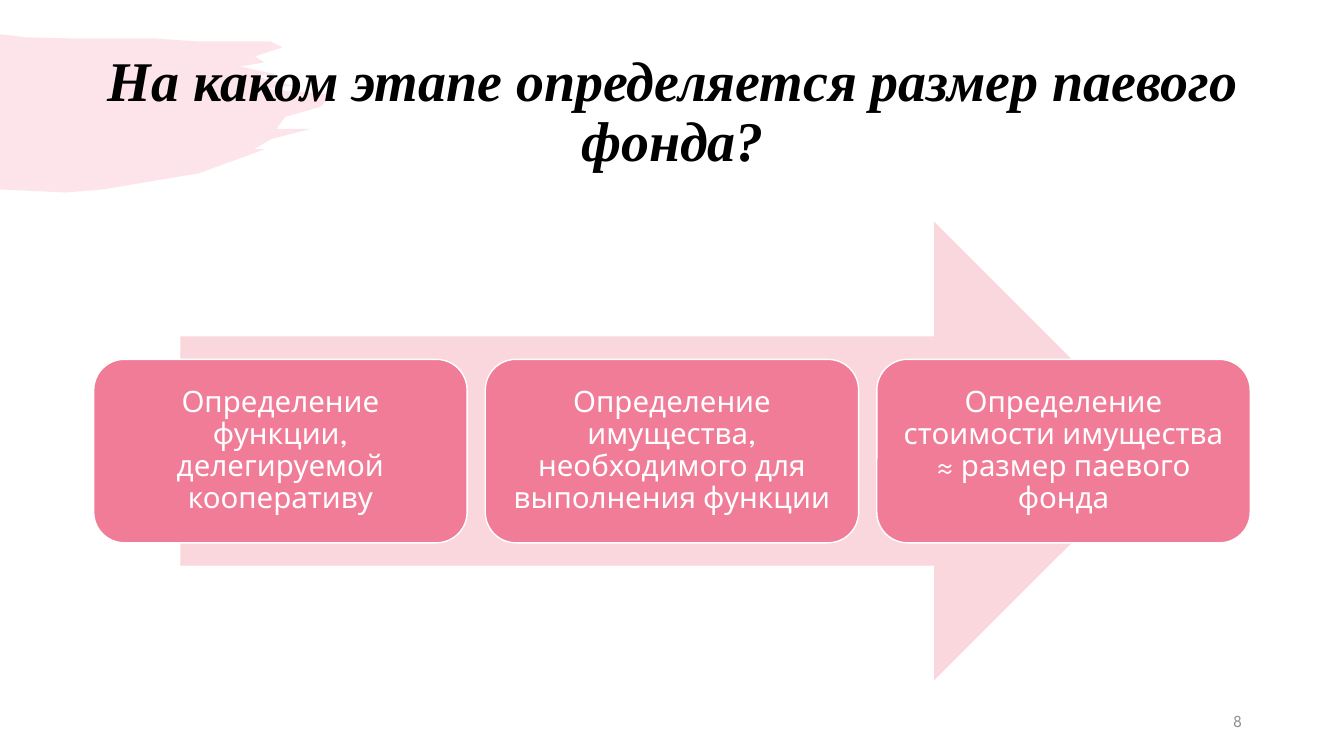
from lxml import etree
from pptx import Presentation
from pptx.dml.color import RGBColor
from pptx.enum.shapes import MSO_SHAPE as Shape
from pptx.enum.text import MSO_ANCHOR as Anchor, PP_ALIGN as Align
from pptx.oxml.ns import qn
from pptx.util import Inches, Pt

ROSE, BLUSH, WHITE, BLACK, GREY = "F07C98", "F9D7DD", "FFFFFF", "000000", "8C8C8C"
BODY_FONT, TITLE_FONT = "League Spartan", "Times New Roman"
STEPS = [
    "Определение функции, делегируемой кооперативу",
    "Определение имущества, необходимого для выполнения функции",
    "Определение стоимости имущества ≈ размер паевого фонда",
]
# Brush outline in inches from its top left corner
BRUSH = [
    (0.25, 0.03), (0.66, 0.04), (1.51, 0.04), (1.94, 0.07), (2.68, 0.07), (2.8, 0.13),
    (2.53, 0.22), (2.62, 0.28), (2.38, 0.32), (2.75, 0.4), (2.51, 0.41), (2.9, 0.51),
    (2.63, 0.54), (3.3, 0.6), (3.18, 0.72), (2.83, 0.82), (2.74, 0.94), (3.08, 0.94),
    (2.69, 1.04), (2.52, 1.14), (2.63, 1.14), (1.97, 1.38), (1.02, 1.54), (0.65, 1.57),
    (0, 1.54),
]


def color(value):
    return RGBColor.from_string(value)


def paint(shape, fill, line=None):
    shape.shadow.inherit = False
    shape.fill.solid()
    shape.fill.fore_color.rgb = color(fill)
    if line:
        shape.line.color.rgb = color(line)
        shape.line.width = Pt(1)
    else:
        shape.line.fill.background()


def write(shape, text, align, ink, inset=0.1, spacing=1.0, **font):
    frame = shape.text_frame
    frame.word_wrap = True
    frame.vertical_anchor = Anchor.MIDDLE
    for side in ("left", "right", "top", "bottom"):
        setattr(frame, f"margin_{side}", Inches(inset))
    para = frame.paragraphs[0]
    para.alignment, para.line_spacing = align, spacing
    span = para.add_run()
    span.text = text
    span.font.color.rgb = color(ink)
    for name, value in font.items():
        setattr(span.font, name, value)


def add_text(page, box, text, align, ink, **options):
    shape = page.shapes.add_textbox(*map(Inches, box))
    write(shape, text, align, ink, **options)


def add_brush(page, left, top):
    points = [(Inches(left + x), Inches(top + y)) for x, y in BRUSH]
    builder = page.shapes.build_freeform(Inches(left), Inches(top))
    builder.add_line_segments(points, close=True)
    brush = builder.convert_to_shape()
    paint(brush, ROSE)
    tint = brush.element.spPr.find(f"{qn('a:solidFill')}/{qn('a:srgbClr')}")
    etree.SubElement(tint, qn("a:alpha"), val="20000")


def add_process(page, box, steps):
    """Wide arrow with a row of step cards across its middle."""
    left, top, width, height = box
    arrow_width = width * 0.85
    arrow = page.shapes.add_shape(
        Shape.RIGHT_ARROW, Inches(left + (width - arrow_width) / 2), Inches(top),
        Inches(arrow_width), Inches(height))
    paint(arrow, BLUSH)
    gap, card_height = 0.18, height * 0.4
    card_width = (width - gap * (len(steps) - 1)) / len(steps)
    for index, step in enumerate(steps):
        card = page.shapes.add_shape(
            Shape.ROUNDED_RECTANGLE, Inches(left + index * (card_width + gap)),
            Inches(top + (height - card_height) / 2), Inches(card_width), Inches(card_height))
        paint(card, ROSE, WHITE)
        write(card, step, Align.CENTER, WHITE, inset=0.09, spacing=0.9,
              size=Pt(21), name=BODY_FONT)


def main():
    deck = Presentation()
    deck.slide_width, deck.slide_height = Inches(13.33), Inches(7.5)
    page = deck.slides.add_slide(deck.slide_layouts[6])
    add_brush(page, 0, 0.34)
    add_text(page, (0.92, 0.4, 11.5, 1.45), "На каком этапе определяется размер паевого фонда?",
             Align.CENTER, BLACK, spacing=0.9, size=Pt(40), name=TITLE_FONT,
             bold=True, italic=True)
    add_process(page, (0.93, 2.2, 11.47, 4.55), STEPS)
    add_text(page, (9.42, 6.95, 3, 0.4), "8", Align.RIGHT, GREY,
             size=Pt(12), name=BODY_FONT)
    deck.save("out.pptx")


if __name__ == "__main__":
    main()
